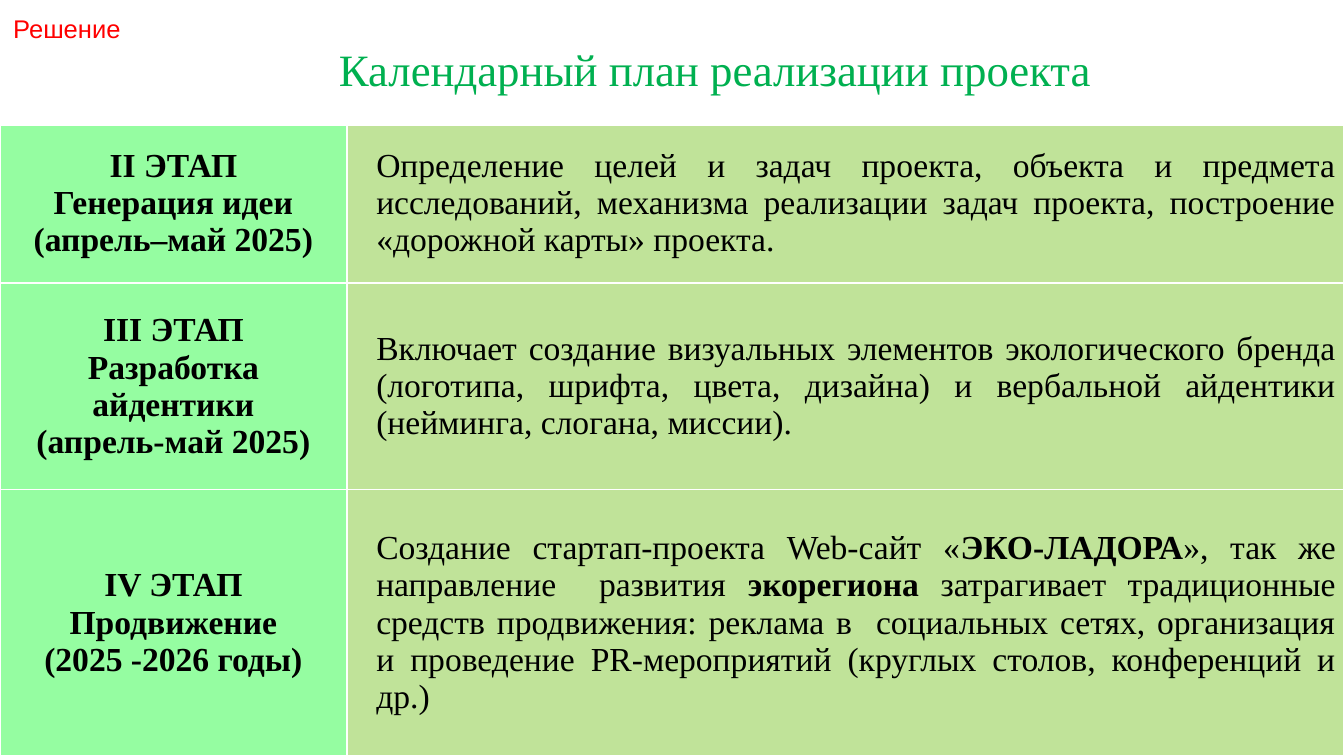
from lxml.etree import SubElement
from pptx import Presentation
from pptx.dml.color import RGBColor
from pptx.enum.text import MSO_ANCHOR as ANCHOR, PP_ALIGN as ALIGN
from pptx.oxml.ns import qn
from pptx.util import Pt

TITLE = "Календарный план реализации проекта"
LABEL = "Решение"
STAGES = [
    (["II ЭТАП", "Генерация идеи", "(апрель–май 2025)"],
     ["Определение целей и задач проекта, объекта и предмета исследований, "
      "механизма реализации задач проекта, построение «дорожной карты» проекта."]),
    (["III ЭТАП", "Разработка айдентики", "(апрель-май 2025)"],
     ["Включает создание визуальных элементов экологического бренда (логотипа, "
      "шрифта, цвета, дизайна) и вербальной айдентики (нейминга, слогана, миссии)."]),
    (["IV ЭТАП", "Продвижение", "(2025 -2026 годы)"],
     ["Создание стартап-проекта Web-сайт «", "ЭКО-ЛАДОРА",
      "», так же направление  развития ", "экорегиона",
      " затрагивает традиционные средств продвижения: реклама в  социальных сетях, "
      "организация и проведение PR-мероприятий (круглых столов, конференций и др.)"]),
]
COL_WIDTHS = [185.8, 534.2]
ROW_HEIGHTS = [85.4, 110.7, 142.6]
TABLE_TOP = 66.2
FILLS = ["95FDA1", "C0E399"]
SERIF = "Times New Roman"


def rgb(value):
    return RGBColor.from_string(value)


def add_text(p, text, size=18, font=SERIF, color="000000", bold=False, align=None):
    r = p.add_run()
    r.text = text
    r.font.size = Pt(size)
    r.font.name = font
    r.font.color.rgb = rgb(color)
    r.font.bold = bold
    if align is not None:
        p.alignment = align


def set_frame(tf, anchor):
    tf.word_wrap = True
    tf.vertical_anchor = anchor
    tf.margin_left = tf.margin_right = tf.margin_top = tf.margin_bottom = Pt(7.2)


def format_cell(cell, fill):
    cell.fill.solid()
    cell.fill.fore_color.rgb = rgb(fill)
    cell.vertical_anchor = ANCHOR.MIDDLE
    cell.margin_left = cell.margin_right = Pt(4.3)
    cell.margin_top = cell.margin_bottom = 0
    return cell.text_frame


def set_top_border(cell, width, color):
    tcPr = cell._tc.get_or_add_tcPr()
    ln = SubElement(tcPr, qn("a:lnT"), w=str(Pt(width)))
    SubElement(SubElement(ln, qn("a:solidFill")), qn("a:srgbClr"), val=color)
    tcPr.insert(0, ln)


def add_stages(s):
    frame = s.shapes.add_table(len(STAGES), 2, 0, Pt(TABLE_TOP),
                               Pt(sum(COL_WIDTHS)), Pt(sum(ROW_HEIGHTS)))
    table = frame.table
    table.first_row = table.horz_banding = False
    for col, width in zip(table.columns, COL_WIDTHS):
        col.width = Pt(width)
    for row, height, (stage, details) in zip(table.rows, ROW_HEIGHTS, STAGES):
        row.height = Pt(height)
        stage_tf, detail_tf = [format_cell(c, f) for c, f in zip(row.cells, FILLS)]
        for i, line in enumerate(stage):
            p = stage_tf.add_paragraph() if i else stage_tf.paragraphs[0]
            add_text(p, line, bold=True, align=ALIGN.CENTER)
        p = detail_tf.paragraphs[0]
        p._p.get_or_add_pPr().set("marL", str(Pt(11.5)))
        if len(details) > 1:
            p.space_before = Pt(3.6)
        for i, part in enumerate(details):
            add_text(p, part, bold=i % 2 == 1, align=ALIGN.JUSTIFY)
    for cell in table.rows[0].cells:
        set_top_border(cell, 3, "FFFFFF")


def main():
    prs = Presentation()
    prs.slide_width, prs.slide_height = Pt(720), Pt(405)
    s = prs.slides.add_slide(prs.slide_layouts[5])

    sp = s.shapes.title
    sp.left, sp.top, sp.width, sp.height = Pt(153), Pt(8.6), Pt(460), Pt(49.7)
    set_frame(sp.text_frame, ANCHOR.BOTTOM)
    add_text(sp.text_frame.paragraphs[0], TITLE, size=24, color="00B050",
             align=ALIGN.CENTER)

    add_stages(s)

    tf = s.shapes.add_textbox(0, 0, Pt(122.4), Pt(45.4)).text_frame
    set_frame(tf, ANCHOR.TOP)
    add_text(tf.paragraphs[0], LABEL, size=13.7, font="Arial", color="FF0000")
    prs.save("out.pptx")


if __name__ == "__main__":
    main()
